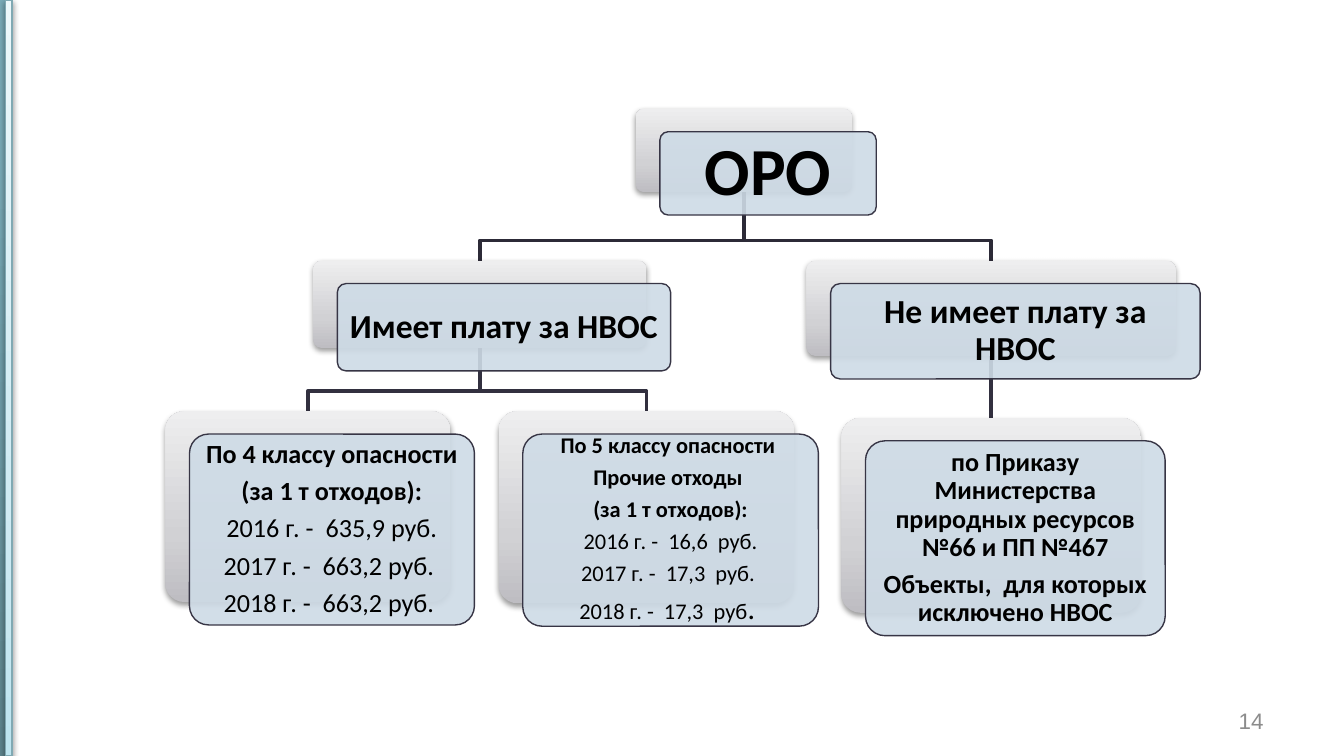
from lxml.etree import SubElement
from pptx import Presentation
from pptx.dml.color import RGBColor
from pptx.enum.shapes import MSO_CONNECTOR, MSO_SHAPE
from pptx.enum.text import MSO_ANCHOR, PP_ALIGN
from pptx.oxml.ns import qn
from pptx.util import Inches, Pt

WIDE = 10
HIGH = WIDE * 9 / 16

BLACK = RGBColor(0, 0, 0)
GRAY = RGBColor(0x8C, 0x8C, 0x8C)
PALE = RGBColor(0xCE, 0xDB, 0xE6)
EDGE = RGBColor(0x37, 0x35, 0x45)
RIM = RGBColor(0x80, 0xA9, 0xB3)
TOP_INK = RGBColor(0x2C, 0x2A, 0x37)
LOW_INK = RGBColor(0x32, 0x30, 0x3F)

# Gradient stops: percent and colour, from bottom to top
TEAL = [(0, RGBColor(0x5D, 0x84, 0x8D)), (80, RGBColor(0x79, 0xAB, 0xB8)),
        (100, RGBColor(0x78, 0xAD, 0xBA))]
SKY = [(0, RGBColor(0xBD, 0xE4, 0xEF)), (35, RGBColor(0xD0, 0xEB, 0xF3)),
       (100, RGBColor(0xEC, 0xF8, 0xFB))]
STEEL = [(0, RGBColor(0xBE, 0xBD, 0xC2)), (35, RGBColor(0xD1, 0xD1, 0xD4)),
         (100, RGBColor(0xEE, 0xEE, 0xEF))]

SHIFT_X, SHIFT_Y = 0.18, 0.17  # offset of the front card
DROP = 0.15                    # height of the last leg of a branch

# Back card (left, top, width, height) and rows of (text, size, bold) runs
NODES = {
    "root": ((4.73, 0.81, 1.61, 0.62), [[("ОРО", 36, True)]]),
    "paid": ((2.33, 1.94, 2.48, 0.65), [[("Имеет плату за НВОС ", 18, True)]]),
    "four": ((1.23, 3.06, 2.12, 1.42), [
        [("По 4 классу опасности", 14, True)],
        [("(за 1 т отходов):", 14, True)],
        [("2016 г. -  635,9 руб.", 14, False)],
        [("2017 г. -  663,2 руб. ", 14, False)],
        [("2018 г. -  663,2 руб. ", 14, False)]]),
    "five": ((3.71, 3.06, 2.2, 1.43), [
        [("По 5 классу опасности ", 12, True)],
        [("Прочие отходы ", 12, True)],
        [("(за 1 т отходов):", 12, True)],
        [("2016 г. -  16,6  руб.", 12, False)],
        [("2017 г. -  17,3  руб. ", 12, False)],
        [("2018 г. -  17,3  руб", 12, False), (". ", 16, False)]]),
    "free": ((6, 1.94, 2.75, 0.71), [[("Не имеет плату за НВОС", 18, True)]]),
    "order": ((6.26, 3.11, 2.23, 1.45), [
        [("по Приказу Министерства природных ресурсов №66 и ПП №467", 14, True)],
        [("Объекты,  для которых исключено НВОС", 14, True)]]),
}
LINKS = [("free", "order", LOW_INK), ("root", "free", TOP_INK),
         ("paid", "five", LOW_INK), ("paid", "four", LOW_INK),
         ("root", "paid", TOP_INK)]


def style(item, **vals):
    for name, val in vals.items():
        setattr(item, name, val)


def add_box(slide, kind, box):
    shape = slide.shapes.add_shape(kind, *map(Inches, box))
    shape.shadow.inherit = False
    if kind == MSO_SHAPE.ROUNDED_RECTANGLE:
        shape.adjustments[0] = 0.1
    return shape


def set_line(shape, color, width):
    shape.line.color.rgb = color
    shape.line.width = Pt(width)


def set_alpha(node, pct):
    SubElement(node, qn("a:alpha"), val=str(pct * 1000))


def add_shade(shape, stops, alpha=38, dist=1.6):
    """Vertical gradient fill with a soft shadow below."""
    shape.fill.gradient()
    shape.fill.gradient_angle = 90
    props = shape.element.spPr
    group = props.find(qn("a:gradFill")).find(qn("a:gsLst"))
    for old in list(group):
        group.remove(old)
    for pos, color in stops:
        stop = SubElement(group, qn("a:gs"), pos=str(pos * 1000))
        SubElement(stop, qn("a:srgbClr"), val=str(color))
    cast = SubElement(props.find(qn("a:effectLst")), qn("a:outerShdw"),
                      blurRad=str(Pt(3.1)), dist=str(Pt(dist)),
                      dir="5400000", rotWithShape="0")
    set_alpha(SubElement(cast, qn("a:srgbClr"), val=str(BLACK)), alpha)


def add_rows(frame, rows):
    inset = Inches(0.06)
    style(frame, word_wrap=True, vertical_anchor=MSO_ANCHOR.MIDDLE,
          margin_left=inset, margin_right=inset,
          margin_top=inset, margin_bottom=inset)
    for num, row in enumerate(rows):
        para = frame.add_paragraph() if num else frame.paragraphs[0]
        style(para, alignment=PP_ALIGN.CENTER, line_spacing=0.9)
        if num < len(rows) - 1:
            para.space_after = Pt(0.35 * row[0][1])
        for text, size, bold in row:
            run = para.add_run()
            run.text = text
            style(run.font, name="Calibri", size=Pt(size), bold=bold)
            run.font.color.rgb = BLACK


def add_node(slide, box, rows):
    back = add_box(slide, MSO_SHAPE.ROUNDED_RECTANGLE, box)
    back.line.fill.background()
    add_shade(back, STEEL)
    left, top, wide, high = box
    front = add_box(slide, MSO_SHAPE.ROUNDED_RECTANGLE,
                    (left + SHIFT_X, top + SHIFT_Y, wide, high))
    front.fill.solid()
    front.fill.fore_color.rgb = PALE
    set_alpha(front.element.spPr.find(qn("a:solidFill"))[0], 90)
    set_line(front, EDGE, 0.75)
    add_rows(front.text_frame, rows)


def add_link(slide, start, end, color):
    """Branch from the bottom of one card to the top of another."""
    x1, y1 = start[0] + start[2] / 2, start[1] + start[3]
    x2, y2 = end[0] + end[2] / 2, end[1]
    if abs(x1 - x2) < 0.02:
        link = slide.shapes.add_connector(
            MSO_CONNECTOR.STRAIGHT, *map(Inches, (x1, y1, x1, y2)))
        SubElement(link.element.spPr, qn("a:effectLst"))
        set_line(link, color, 2)
        return
    bend = y2 - DROP
    path = slide.shapes.build_freeform(Inches(x1), Inches(y1))
    path.add_line_segments([(Inches(x), Inches(y)) for x, y in
                            ((x1, bend), (x2, bend), (x2, y2))], close=False)
    link = path.convert_to_shape()
    link.shadow.inherit = False
    link.fill.background()
    set_line(link, color, 2)


def add_rail(slide):
    dark = add_box(slide, MSO_SHAPE.RECTANGLE, (-0.01, 0, 0.05, HIGH))
    dark.line.fill.background()
    add_shade(dark, TEAL, 35, 1.8)
    light = add_box(slide, MSO_SHAPE.RECTANGLE, (0.04, 0, 0.05, HIGH))
    set_line(light, RIM, 0.75)
    add_shade(light, SKY)


def add_page(slide, text):
    box = slide.shapes.add_textbox(*map(Inches, (7.17, 5.21, 2.33, 0.3)))
    style(box.text_frame, word_wrap=True, vertical_anchor=MSO_ANCHOR.MIDDLE)
    para = box.text_frame.paragraphs[0]
    para.alignment = PP_ALIGN.RIGHT
    run = para.add_run()
    run.text = text
    style(run.font, name="Arial", size=Pt(12))
    run.font.color.rgb = GRAY


def main():
    deck = Presentation()
    style(deck, slide_width=Inches(WIDE), slide_height=Inches(HIGH))
    slide = deck.slides.add_slide(deck.slide_layouts[6])

    # Side rail and page number
    add_rail(slide)
    add_page(slide, "14")

    # Branches lie behind the cards
    for start, end, color in LINKS:
        add_link(slide, NODES[start][0], NODES[end][0], color)
    for box, rows in NODES.values():
        add_node(slide, box, rows)

    deck.save("out.pptx")


if __name__ == "__main__":
    main()
